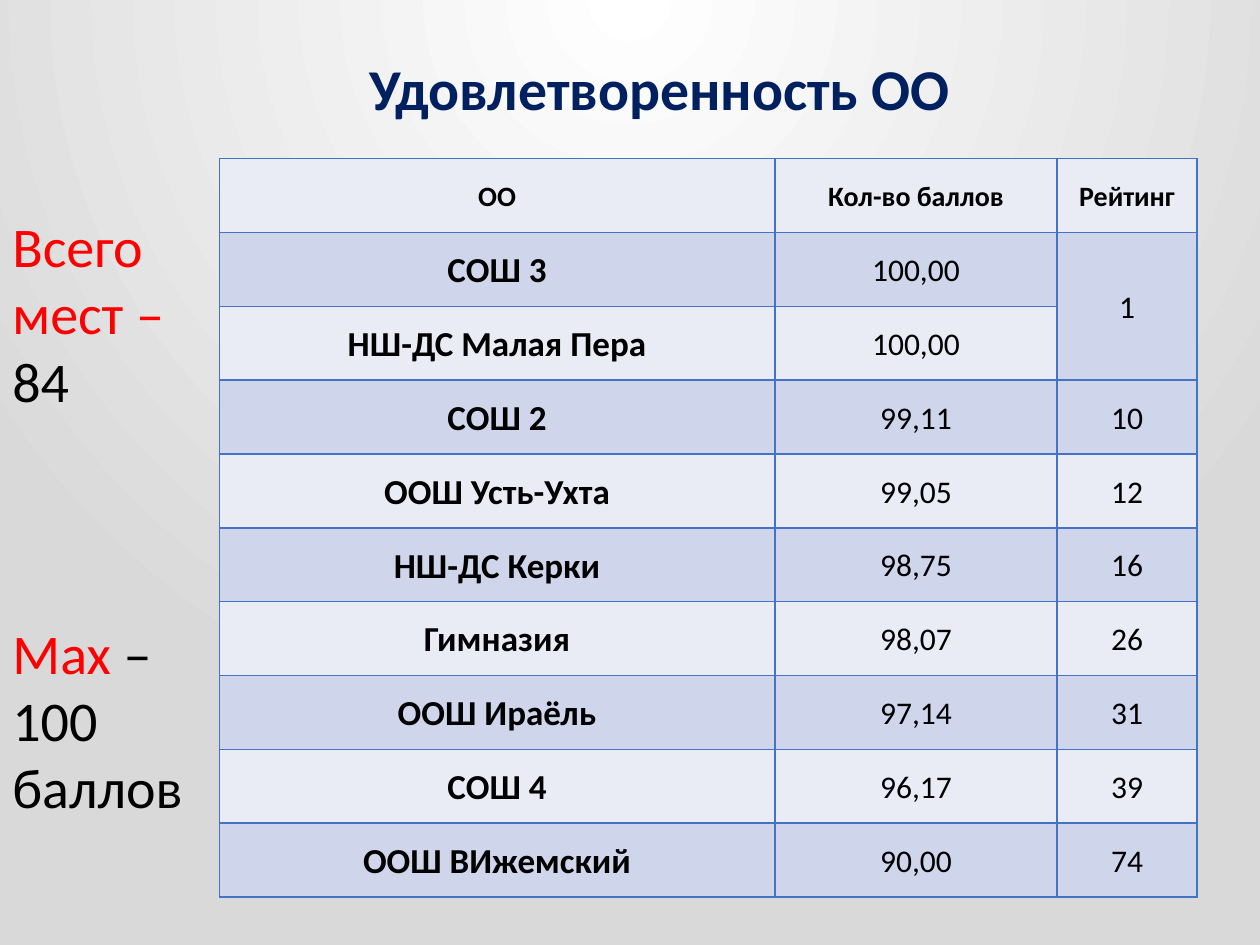
from pptx import Presentation
from pptx.dml.color import RGBColor as Rgb
from pptx.enum.text import MSO_ANCHOR as Anchor, PP_ALIGN as Align
from pptx.oxml import parse_xml
from pptx.oxml.ns import nsdecls
from pptx.util import Inches, Pt

COLORS = {
    "title": "002060", "text": "000000", "mark": "FF0000",
    "odd": "E9EBF5", "even": "CFD5EA", "line": "4472C4",
    "core": "FFFFFF", "edge": "D9D9D9",
}
FONT = "Calibri"
HEAD = ("ОО", "Кол-во баллов", "Рейтинг")
ROWS = (
    ("СОШ 3", "100,00", "1"),
    ("НШ-ДС Малая Пера", "100,00", ""),
    ("СОШ 2", "99,11", "10"),
    ("ООШ Усть-Ухта", "99,05", "12"),
    ("НШ-ДС Керки", "98,75", "16"),
    ("Гимназия", "98,07", "26"),
    ("ООШ Ираёль", "97,14", "31"),
    ("СОШ 4", "96,17", "39"),
    ("ООШ ВИжемский", "90,00", "74"),
)
NOTES = (
    (0, (("Всего мест –", "mark"),)),
    (0, (("84", "text"),)),
    (117, (("Max ", "mark"), ("–", "text"))),
    (0, (("100 баллов", "text"),)),
)


def add_run(para, text, size, color="text", bold=False):
    """Add one styled run to a paragraph."""
    run = para.add_run()
    run.text = text
    font = run.font
    font.name, font.size, font.bold = FONT, Pt(size), bold
    font.color.rgb = Rgb.from_string(COLORS[color])


def add_frame(slide, box):
    """Add a wrapping text box and return its frame."""
    frame = slide.shapes.add_textbox(*map(Inches, box)).text_frame
    frame.word_wrap = True
    return frame


def add_back(slide):
    """Fill the background with a round gradient."""
    slide.element.cSld.insert(0, parse_xml(
        f'<p:bg {nsdecls("p", "a")}><p:bgPr><a:gradFill rotWithShape="1"><a:gsLst>'
        f'<a:gs pos="0"><a:srgbClr val="{COLORS["core"]}"/></a:gs>'
        f'<a:gs pos="100000"><a:srgbClr val="{COLORS["edge"]}"/></a:gs>'
        '</a:gsLst><a:path path="circle">'
        '<a:fillToRect l="50000" t="-80000" r="50000" b="180000"/></a:path>'
        '</a:gradFill><a:effectLst/></p:bgPr></p:bg>'))


def add_title(slide, box):
    """Place the centred heading."""
    frame = add_frame(slide, box)
    frame.vertical_anchor = Anchor.MIDDLE
    para = frame.paragraphs[0]
    para.alignment, para.line_spacing = Align.CENTER, 0.9
    add_run(para, "Удовлетворенность ОО", 33, "title", True)


def add_notes(slide, box):
    """Place the totals at the left side."""
    frame = add_frame(slide, box)
    for num, (gap, runs) in enumerate(NOTES):
        para = frame.add_paragraph() if num else frame.paragraphs[0]
        if gap:
            para.space_before = Pt(gap)
        for text, color in runs:
            add_run(para, text, 32, color)


def style_cell(cell, fill, side):
    """Set the borders, fill and margins of a cell."""
    props = cell._tc.get_or_add_tcPr()
    for edge in "LRTB":
        props.append(parse_xml(
            f'<a:ln{edge} {nsdecls("a")} w="{Pt(1)}"><a:solidFill>'
            f'<a:srgbClr val="{COLORS["line"]}"/></a:solidFill></a:ln{edge}>'))
    cell.fill.solid()
    cell.fill.fore_color.rgb = Rgb.from_string(COLORS[fill])
    cell.vertical_anchor = Anchor.MIDDLE
    cell.margin_left = cell.margin_right = Inches(side)
    cell.margin_top = cell.margin_bottom = 0


def add_scores(slide, box):
    """Place the table of scores and ranks."""
    data = (HEAD,) + ROWS
    table = slide.shapes.add_table(len(data), len(HEAD), *map(Inches, box)).table
    for col, width in zip(table.columns, (4.41, 2.24, 1.11)):
        col.width = Inches(width)
    for row, texts in enumerate(data):
        table.rows[row].height = Inches(box[3] / len(data))
        for col, text in enumerate(texts):
            cell = table.cell(row, col)
            tight = col == 0 or (row == 0 and col == 2)
            style_cell(cell, "even" if row % 2 else "odd", 0.04 if tight else 0.07)
            if text:
                para = cell.text_frame.paragraphs[0]
                para.alignment, para.line_spacing = Align.CENTER, 1.07
                size = 16 if row == 0 else 18 if col else 20
                add_run(para, text, size, bold=row == 0 or col == 0)
    table.cell(1, 2).merge(table.cell(2, 2))


def main():
    """Build and save the slide."""
    deck = Presentation()
    deck.slide_width, deck.slide_height = Inches(10), Inches(7.5)
    slide = deck.slides.add_slide(deck.slide_layouts[6])
    add_back(slide)
    add_title(slide, (0.61, 0, 9.25, 1.45))
    add_scores(slide, (1.74, 1.26, 7.76, 5.86))
    add_notes(slide, (0, 1.63, 2.09, 4.95))
    deck.save("out.pptx")


if __name__ == "__main__":
    main()
